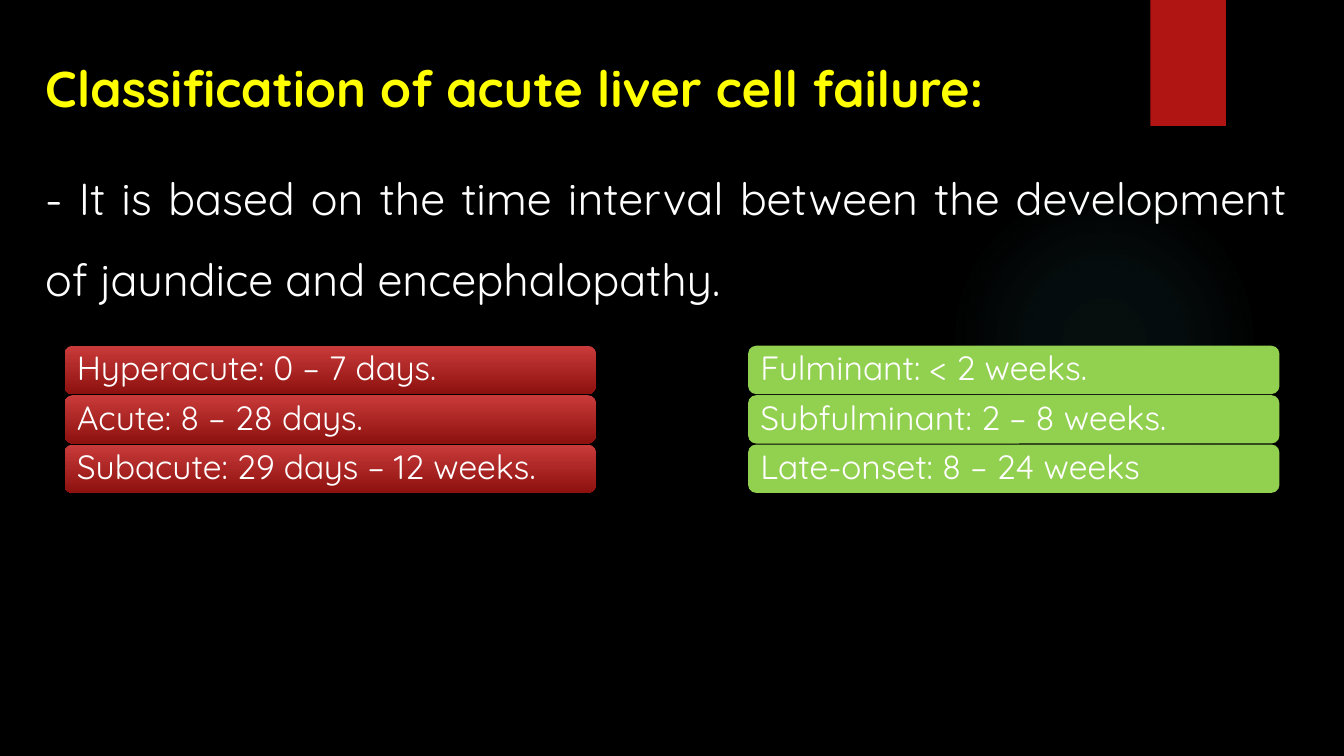
from pptx import Presentation
from pptx.dml.color import RGBColor
from pptx.enum.shapes import MSO_SHAPE
from pptx.enum.text import MSO_ANCHOR, PP_ALIGN
from pptx.oxml import parse_xml
from pptx.oxml.ns import nsdecls, qn
from pptx.util import Inches, Pt

ELLIPSE, RECTANGLE, ROUNDED = MSO_SHAPE.OVAL, MSO_SHAPE.RECTANGLE, MSO_SHAPE.ROUNDED_RECTANGLE
MIDDLE = MSO_ANCHOR.MIDDLE
LEFT, JUSTIFY = PP_ALIGN.LEFT, PP_ALIGN.JUSTIFY

BLACK = RGBColor(0x00, 0x00, 0x00)
WHITE = RGBColor(0xFF, 0xFF, 0xFF)
YELLOW = RGBColor(0xFF, 0xFF, 0x00)
GREEN = RGBColor(0x92, 0xD0, 0x50)
RIBBON_RED = RGBColor(0xB0, 0x15, 0x13)
LIGHT_RED = RGBColor(0xC9, 0x3B, 0x3A)
DARK_RED = RGBColor(0x8D, 0x11, 0x0F)
TEAL = RGBColor(0x50, 0xB9, 0xC1)

FONT = "Quicksand"
GLOW_STOPS = [(0, 7), (36, 6), (69, 0)]
BAR_HEIGHT, BAR_PITCH = 0.48, 0.49
DAYS = ["Hyperacute: 0 – 7 days.", "Acute: 8 – 28 days.", "Subacute: 29 days – 12 weeks."]
WEEKS = ["Fulminant: < 2 weeks.", "Subfulminant: 2 – 8 weeks.", "Late-onset: 8 – 24 weeks"]


def add_plain_shape(page, kind, left, top, width, height):
    """Add a preset shape without outline or shadow."""
    shape = page.shapes.add_shape(kind, Inches(left), Inches(top), Inches(width), Inches(height))
    shape.shadow.inherit = False
    shape.line.fill.background()
    return shape


def style_paragraph(para, size, color, spacing, align, bold=False):
    """Format a paragraph and its runs."""
    para.alignment = align
    para.line_spacing = spacing
    for span in para.runs:
        span.font.name = FONT
        span.font.size = Pt(size)
        span.font.bold = bold
        span.font.color.rgb = color


def add_backdrop(page):
    """Paint the black background, the faint glow and the red ribbon."""
    page.background.fill.solid()
    page.background.fill.fore_color.rgb = BLACK

    glow = add_plain_shape(page, ELLIPSE, 9.41, 1.83, 3.08, 3.08)
    glow.fill.background()
    stops = "".join(
        f'<a:gs pos="{position * 1000}"><a:srgbClr val="{TEAL}">'
        f'<a:alpha val="{opacity * 1000}"/></a:srgbClr></a:gs>'
        for position, opacity in GLOW_STOPS
    )
    gradient = parse_xml(
        f'<a:gradFill {nsdecls("a")}><a:gsLst>{stops}</a:gsLst><a:path path="circle">'
        '<a:fillToRect l="50000" t="50000" r="50000" b="50000"/></a:path></a:gradFill>'
    )
    properties = glow.element.spPr
    properties.replace(properties.find(qn("a:noFill")), gradient)

    ribbon = add_plain_shape(page, RECTANGLE, 11.41, 0, 0.75, 1.25)
    ribbon.fill.solid()
    ribbon.fill.fore_color.rgb = RIBBON_RED


def add_introduction(page, left, top, width, height):
    """Add the yellow heading and the sentence below it."""
    box = page.shapes.add_textbox(Inches(left), Inches(top), Inches(width), Inches(height))
    frame = box.text_frame
    frame.word_wrap = True
    heading = frame.paragraphs[0]
    heading.text = "Classification of acute liver cell failure:"
    style_paragraph(heading, 36, YELLOW, 1.5, JUSTIFY, bold=True)
    sentence = frame.add_paragraph()
    sentence.text = (
        "- It is based on the time interval between the development "
        "of jaundice and encephalopathy."
    )
    style_paragraph(sentence, 32, WHITE, 1.5, JUSTIFY)
    sentence.space_before = Pt(18.75)


def fill_red(bar):
    """Fill a bar with red that darkens downwards."""
    bar.fill.gradient()
    bar.fill.gradient_angle = 270
    for stop, color in zip(bar.fill.gradient_stops, (LIGHT_RED, DARK_RED)):
        stop.color.rgb = color


def fill_green(bar):
    """Fill a bar with plain green."""
    bar.fill.solid()
    bar.fill.fore_color.rgb = GREEN


def add_bar_list(page, left, top, width, labels, fill_bar):
    """Stack one rounded bar for each label."""
    for row, label in enumerate(labels):
        bar = add_plain_shape(page, ROUNDED, left, top + row * BAR_PITCH, width, BAR_HEIGHT)
        fill_bar(bar)
        frame = bar.text_frame
        frame.word_wrap = True
        frame.vertical_anchor = MIDDLE
        frame.margin_left = frame.margin_right = Inches(0.1)
        frame.margin_top = frame.margin_bottom = Inches(0)
        frame.text = label
        style_paragraph(frame.paragraphs[0], 24, WHITE, 0.9, LEFT)


def main():
    """Build the slide and save it."""
    deck = Presentation()
    deck.slide_width, deck.slide_height = Inches(13.33), Inches(7.5)
    page = deck.slides.add_slide(deck.slide_layouts[6])
    add_backdrop(page)
    add_introduction(page, 0.35, 0.22, 12.52, 2.88)
    add_bar_list(page, 7.42, 3.43, 5.27, WEEKS, fill_green)
    add_bar_list(page, 0.64, 3.43, 5.27, DAYS, fill_red)
    deck.save("out.pptx")


if __name__ == "__main__":
    main()
